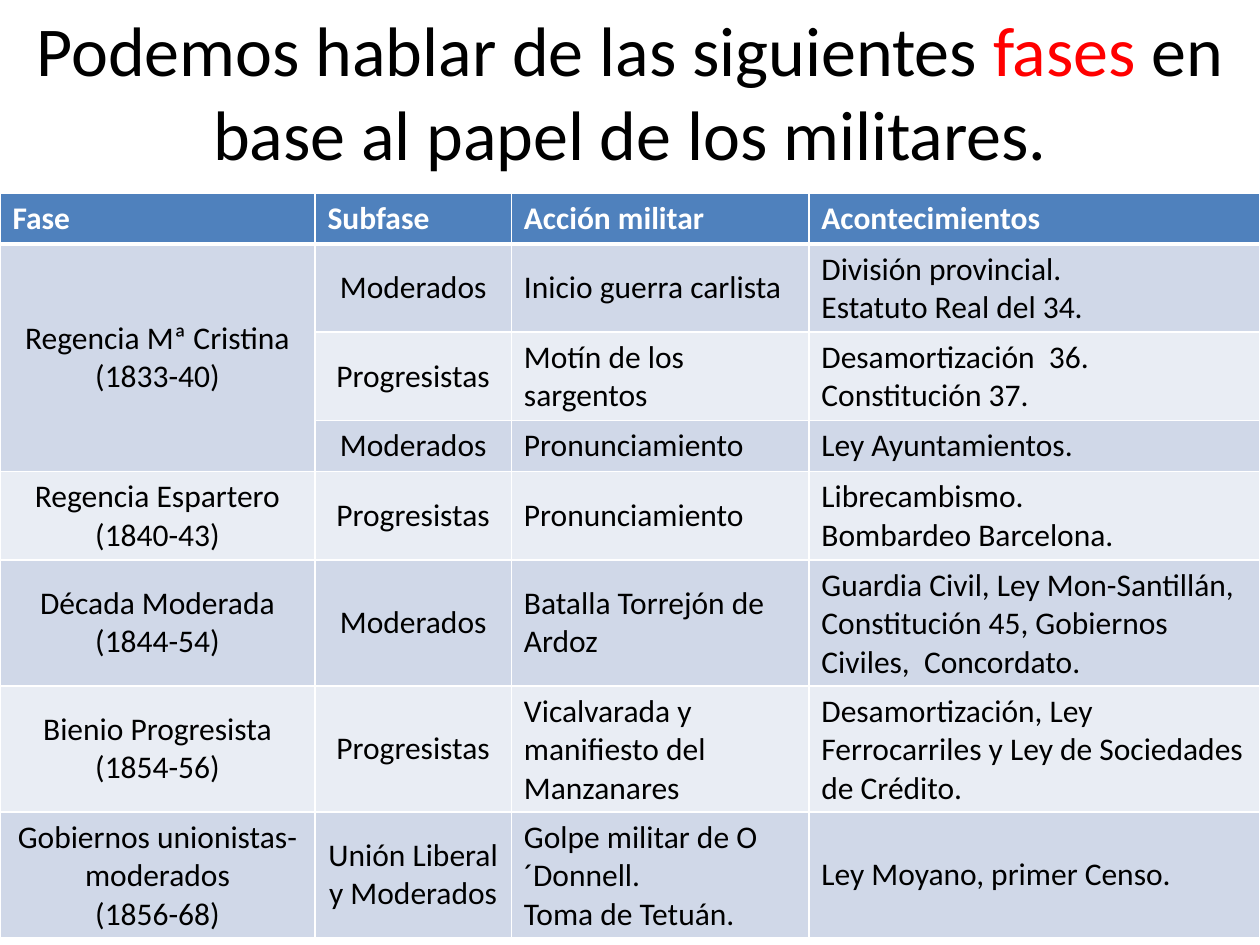
from lxml import etree
from pptx import Presentation
from pptx.dml.color import RGBColor
from pptx.enum.text import MSO_ANCHOR, PP_ALIGN
from pptx.oxml.ns import qn
from pptx.util import Pt

CENTER, LEFT = PP_ALIGN.CENTER, PP_ALIGN.LEFT
MIDDLE = MSO_ANCHOR.MIDDLE

# Content
TITLE = [("Podemos hablar de las siguientes ", "text"),
         ("fases", "accent"),
         (" en base al papel de los militares.", "text")]
HEADER = ["Fase", "Subfase", "Acción militar", "Acontecimientos"]
PHASES = [  # a blank phase continues the one above
    ["Regencia Mª Cristina\n(1833-40)", "Moderados", "Inicio guerra carlista",
     "División provincial.\nEstatuto Real del 34."],
    ["", "Progresistas", "Motín de los sargentos",
     "Desamortización  36.\nConstitución 37."],
    ["", "Moderados", "Pronunciamiento", "Ley Ayuntamientos."],
    ["Regencia Espartero\n(1840-43)", "Progresistas", "Pronunciamiento",
     "Librecambismo.\nBombardeo Barcelona."],
    ["Década Moderada\n(1844-54)", "Moderados", "Batalla Torrejón de Ardoz",
     "Guardia Civil, Ley Mon-Santillán, Constitución 45, Gobiernos Civiles,  Concordato."],
    ["Bienio Progresista\n(1854-56)", "Progresistas",
     "Vicalvarada y manifiesto del Manzanares",
     "Desamortización, Ley Ferrocarriles y Ley de Sociedades de Crédito."],
    ["Gobiernos unionistas-moderados\n(1856-68)", "Unión Liberal y Moderados",
     "Golpe militar de O´Donnell.\nToma de Tetuán.", "Ley Moyano, primer Censo."],
]
ROW_LINES = [1, 2, 2, 1, 2, 3, 3, 3]

# Theme and layout
THEME = {"font": "Calibri", "title": 40, "body": 18, "text": "000000",
         "accent": "FF0000", "header": "4F81BD", "on_header": "FFFFFF",
         "bands": ["D0D8E8", "E9EDF4"], "rule": "FFFFFF"}
SLIDE_W, SLIDE_H = 720, 540
TITLE_H, TABLE_TOP = 104.4, 110.2
COLUMN_WIDTHS = [180, 112.2, 170, 257.8]
HEIGHT_BY_LINES = {1: 29.2, 2: 50.4, 3: 72}
THIN, THICK = 1, 3


def style_run(run, size, color, bold=False):
    run.font.name = THEME["font"]
    run.font.size = Pt(size)
    run.font.bold = bold
    run.font.color.rgb = RGBColor.from_string(color)


def set_borders(cell, widths):
    properties = cell._tc.get_or_add_tcPr()
    for side, width in widths.items():
        line = etree.SubElement(properties, qn(f"a:ln{side}"), w=str(Pt(width)))
        fill = etree.SubElement(line, qn("a:solidFill"))
        etree.SubElement(fill, qn("a:srgbClr"), val=THEME["rule"])


def fill_cell(cell, text, row, column):
    is_header = row == 0
    set_borders(cell, {"L": THIN, "R": THIN,
                       "T": THICK if row == 1 else THIN,
                       "B": THICK if is_header else THIN})
    background = THEME["header"] if is_header else THEME["bands"][(row - 1) % 2]
    cell.fill.solid()
    cell.fill.fore_color.rgb = RGBColor.from_string(background)
    cell.vertical_anchor = MIDDLE
    cell.text_frame.text = text
    for paragraph in cell.text_frame.paragraphs:
        paragraph.alignment = CENTER if column < 2 and not is_header else LEFT
        for run in paragraph.runs:
            style_run(run, THEME["body"],
                      THEME["on_header" if is_header else "text"], is_header)


def add_title(slide):
    frame = slide.shapes.add_textbox(0, 0, Pt(SLIDE_W), Pt(TITLE_H)).text_frame
    frame.word_wrap = True
    paragraph = frame.paragraphs[0]
    paragraph.alignment = CENTER
    for text, color in TITLE:
        run = paragraph.add_run()
        run.text = text
        style_run(run, THEME["title"], THEME[color])


def add_phases(slide):
    rows = [HEADER] + PHASES
    heights = [HEIGHT_BY_LINES[lines] for lines in ROW_LINES]
    table = slide.shapes.add_table(len(rows), len(HEADER), 0, Pt(TABLE_TOP),
                                   Pt(SLIDE_W), Pt(sum(heights))).table
    for column, width in zip(table.columns, COLUMN_WIDTHS):
        column.width = Pt(width)
    for r, (texts, height) in enumerate(zip(rows, heights)):
        table.rows[r].height = Pt(height)
        for c, text in enumerate(texts):
            fill_cell(table.cell(r, c), text, r, c)

    # Join each phase with the blank cells below it
    starts = [r for r, texts in enumerate(rows) if texts[0]]
    for start, following in zip(starts, starts[1:] + [len(rows)]):
        if following - start > 1:
            table.cell(start, 0).merge(table.cell(following - 1, 0))


def main():
    deck = Presentation()
    deck.slide_width, deck.slide_height = Pt(SLIDE_W), Pt(SLIDE_H)
    slide = deck.slides.add_slide(deck.slide_layouts[6])
    add_title(slide)
    add_phases(slide)
    deck.save("out.pptx")


if __name__ == "__main__":
    main()
